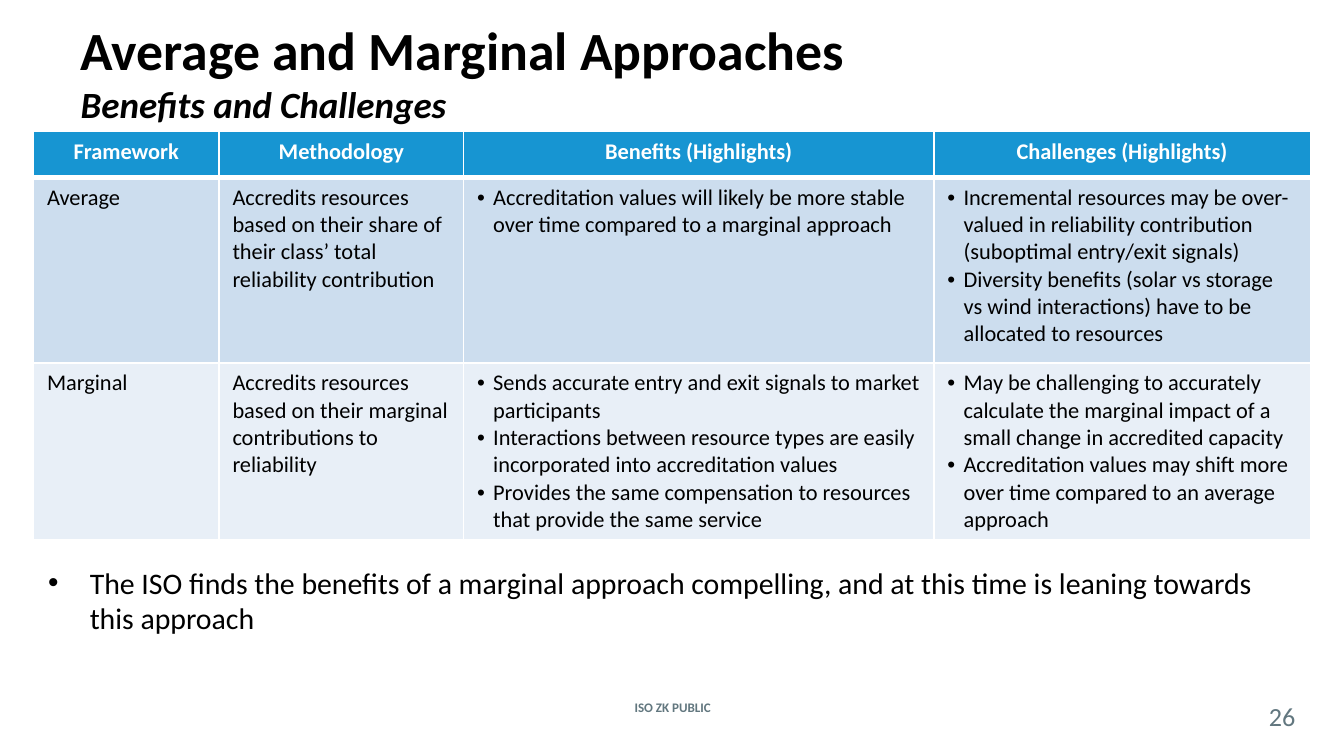
from lxml import etree
from pptx import Presentation
from pptx.dml.color import RGBColor
from pptx.enum.text import MSO_ANCHOR, MSO_AUTO_SIZE, PP_ALIGN
from pptx.oxml.ns import qn
from pptx.util import Inches, Pt

LEFT, CENTER = PP_ALIGN.LEFT, PP_ALIGN.CENTER
TOP, MIDDLE = MSO_ANCHOR.TOP, MSO_ANCHOR.MIDDLE
NO_FIT, GROW = MSO_AUTO_SIZE.NONE, MSO_AUTO_SIZE.SHAPE_TO_FIT_TEXT

BLACK = RGBColor(0x00, 0x00, 0x00)
WHITE = RGBColor(0xFF, 0xFF, 0xFF)
GRAY = RGBColor(0x62, 0x77, 0x7F)
HEADER_BLUE = RGBColor(0x17, 0x95, 0xD2)
ROW_FILLS = [RGBColor(0xCC, 0xDD, 0xEE), RGBColor(0xE8, 0xEF, 0xF7)]

HEADERS = ["Framework", "Methodology", "Benefits (Highlights)", "Challenges (Highlights)"]
# A list in a cell becomes bullets
ROWS = [
    ["Average",
     "Accredits resources based on their share of their class’ total reliability contribution",
     ["Accreditation values will likely be more stable over time compared to a marginal approach"],
     ["Incremental resources may be over-valued in reliability contribution "
      "(suboptimal entry/exit signals)",
      "Diversity benefits (solar vs storage vs wind interactions) have to be "
      "allocated to resources"]],
    ["Marginal",
     "Accredits resources based on their marginal contributions to reliability",
     ["Sends accurate entry and exit signals to market participants",
      "Interactions between resource types are easily incorporated into accreditation values",
      "Provides the same compensation to resources that provide the same service"],
     ["May be challenging to accurately calculate the marginal impact of a small change "
      "in accredited capacity",
      "Accreditation values may shift more over time compared to an average approach"]],
]


class Deck:
    font = "Calibri"

    def __init__(self, width, height):
        self.prs = Presentation()
        self.prs.slide_width, self.prs.slide_height = Inches(width), Inches(height)
        self.s = self.prs.slides.add_slide(self.prs.slide_layouts[5])

    def style(self, font, size, color, bold=False, italic=False):
        font.name, font.size = self.font, Pt(size)
        font.bold, font.italic = bold, italic
        font.color.rgb = color

    def bullet(self, p, indent):
        pPr = p._p.get_or_add_pPr()
        pPr.set("marL", str(Inches(indent)))
        pPr.set("indent", str(-Inches(indent)))
        etree.SubElement(pPr, qn("a:buFont"), typeface="Arial")
        etree.SubElement(pPr, qn("a:buChar"), char="•")

    def fill_text(self, tf, text, size, color, bold=False, align=LEFT, indent=0.12):
        bulleted = isinstance(text, list)
        tf.text = "\n".join(text) if bulleted else text
        for p in tf.paragraphs:
            p.alignment = align
            if bulleted:
                self.bullet(p, indent)
            for r in p.runs:
                self.style(r.font, size, color, bold)

    def title(self, x, y, w, h, heading, subheading):
        sp = self.s.shapes.title
        sp.left, sp.top, sp.width, sp.height = map(Inches, (x, y, w, h))
        tf = sp.text_frame
        tf.text = f"{heading}\v{subheading}"
        tf.auto_size, tf.vertical_anchor = NO_FIT, MIDDLE
        p = tf.paragraphs[0]
        p.alignment = LEFT
        self.style(p.runs[0].font, 28.8, BLACK, bold=True)
        self.style(p.runs[1].font, 19.8, BLACK, bold=True, italic=True)

    def text(self, x, y, w, h, text, size, color, anchor=MIDDLE, margin=None,
             fit=NO_FIT, **options):
        sp = self.s.shapes.add_textbox(*map(Inches, (x, y, w, h)))
        tf = sp.text_frame
        tf.word_wrap, tf.auto_size, tf.vertical_anchor = True, fit, anchor
        if margin is not None:
            tf.margin_left = tf.margin_right = Inches(margin)
            tf.margin_top = tf.margin_bottom = Inches(margin)
        self.fill_text(tf, text, size, color, **options)

    def borders(self, cell, top, bottom):
        tcPr = cell._tc.get_or_add_tcPr()
        for side, width in (("L", 1), ("R", 1), ("T", top), ("B", bottom)):
            ln = etree.SubElement(tcPr, qn(f"a:ln{side}"), w=str(Pt(width)))
            solid = etree.SubElement(ln, qn("a:solidFill"))
            etree.SubElement(solid, qn("a:srgbClr"), val=str(WHITE))

    def cell(self, cell, text, fill, color=BLACK, top=1, bottom=1, **options):
        self.borders(cell, top, bottom)
        cell.fill.solid()
        cell.fill.fore_color.rgb = fill
        self.fill_text(cell.text_frame, text, 12, color, **options)

    def table(self, x, y, col_widths, row_heights, headers, rows):
        size = (sum(col_widths), sum(row_heights))
        table = self.s.shapes.add_table(
            len(row_heights), len(col_widths), *map(Inches, (x, y, *size))).table
        for col, width in zip(table.columns, col_widths):
            col.width = Inches(width)
        for row, height in zip(table.rows, row_heights):
            row.height = Inches(height)
        for c, text in enumerate(headers):
            self.cell(table.cell(0, c), text, HEADER_BLUE, WHITE, bottom=3,
                      bold=True, align=CENTER)
        for r, (row, fill) in enumerate(zip(rows, ROW_FILLS), start=1):
            for c, text in enumerate(row):
                self.cell(table.cell(r, c), text, fill, top=3 if r == 1 else 1)


def main():
    # 16:9 slide
    deck = Deck(10, 10 * 9 / 16)

    # Footer and page number
    deck.text(4.27, 5.16, 1.47, 0.21, "ISO ZK PUBLIC", 7, GRAY, bold=True, align=CENTER)
    deck.text(9.33, 5.22, 0.42, 0.22, "26", 14, GRAY, margin=0, align=CENTER)

    # Title and subtitle
    deck.title(0.5, 0.06, 9, 0.94, "Average and Marginal Approaches",
               "Benefits and Challenges")

    # Comparison table
    deck.table(0.25, 0.98, [1.38, 1.82, 3.5, 2.8], [0.34, 1.38, 1.16], HEADERS, ROWS)

    # Conclusion
    deck.text(0.26, 4.15, 9.49, 0.64,
              ["The ISO finds the benefits of a marginal approach compelling, "
               "and at this time is leaning towards this approach"],
              16, BLACK, anchor=TOP, fit=GROW, indent=0.31)

    deck.prs.save("out.pptx")


if __name__ == "__main__":
    main()
